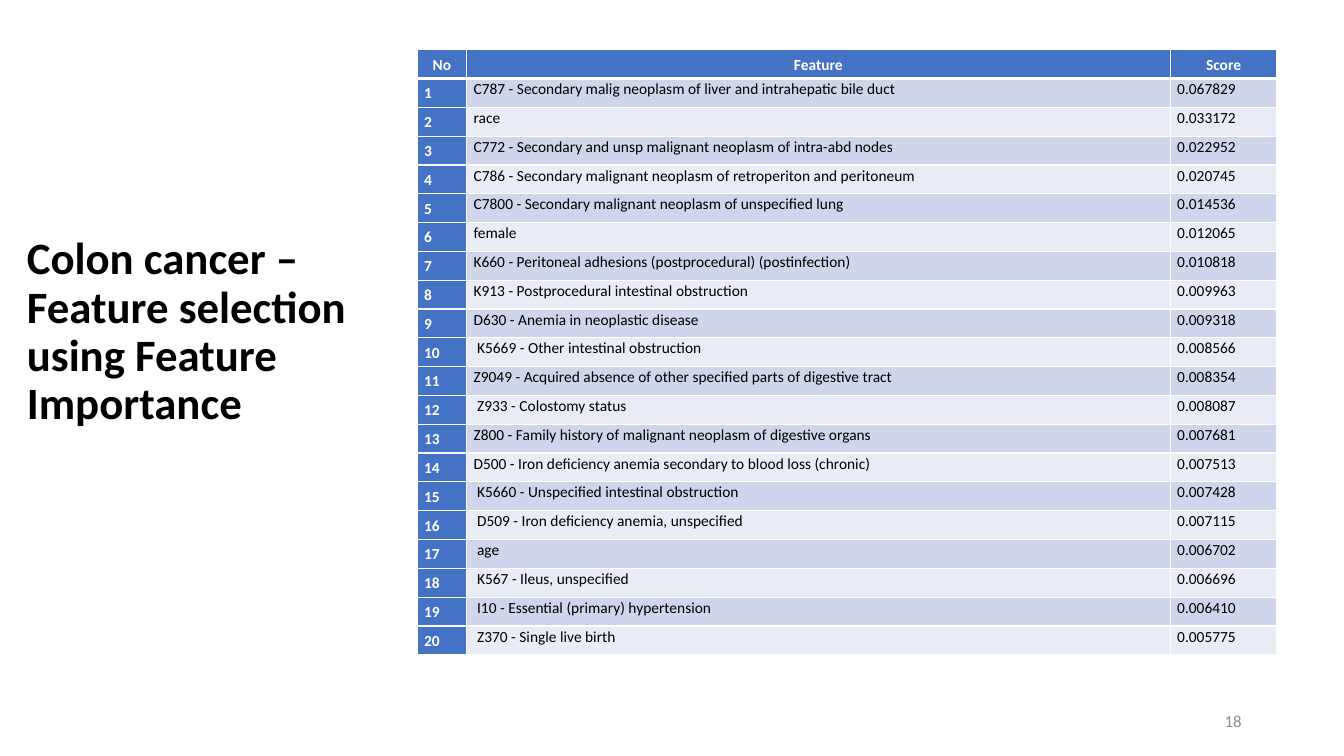
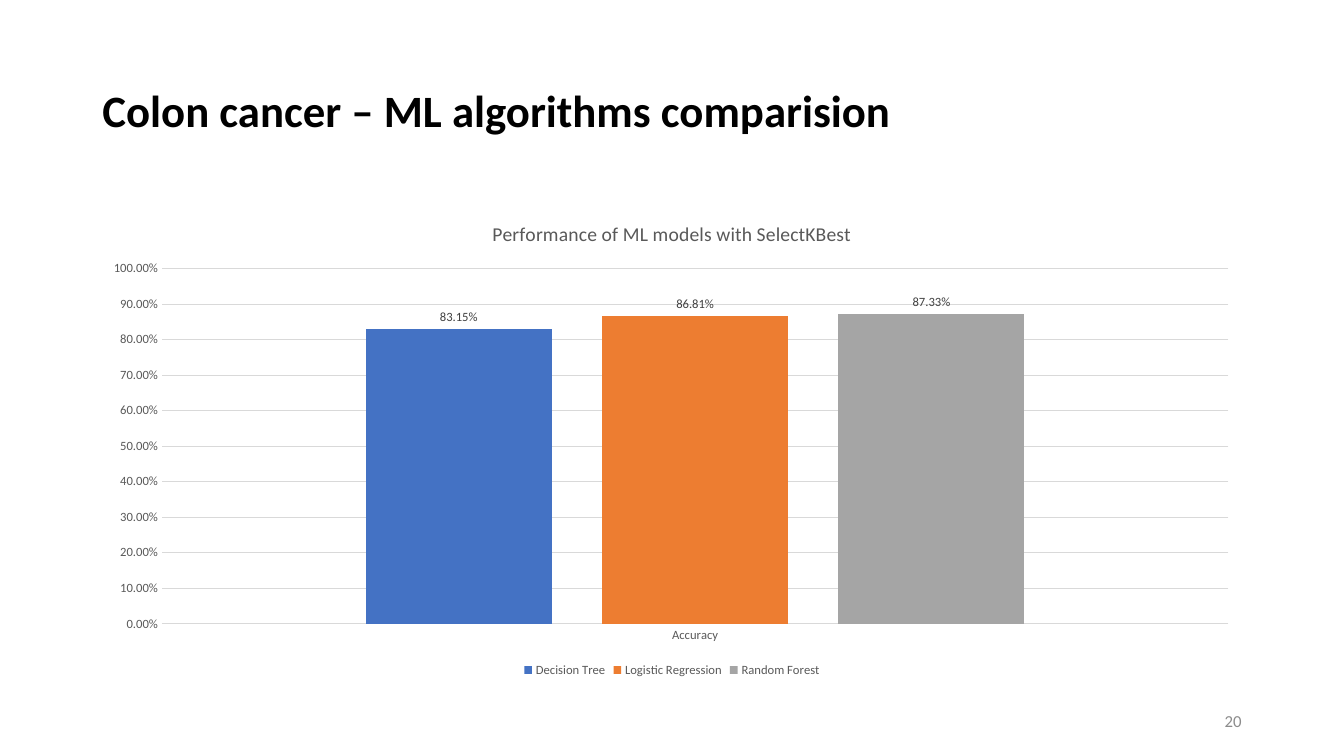
import pptx
import pptx.chart.data
import pptx.dml.color
import pptx.enum.chart
import pptx.enum.text
import pptx.oxml
import pptx.oxml.ns
import pptx.util

Pt = pptx.util.Pt
ALIGN = pptx.enum.text.PP_ALIGN
ANCHOR = pptx.enum.text.MSO_ANCHOR

# Shared style
FONT = "Calibri"
COLORS = {
    "text": "000000", "white": "FFFFFF", "number": "8C8C8C",
    "blue": "4472C4", "orange": "ED7D31", "gray": "A5A5A5",
    "band_dark": "CFD5EA", "band_light": "E9EBF5",
    "chart_text": "595959", "label": "404040", "grid": "D9D9D9",
}

# Content
TABLE_TITLE = ["Colon cancer – ", "Feature selection using Feature Importance"]
CHART_TITLE = ["Colon cancer – ML algorithms comparision"]
HEADERS = ["No", "Feature", "Score"]
FEATURES = [
    ("C787 - Secondary malig neoplasm of liver and intrahepatic bile duct", "0.067829"),
    ("race", "0.033172"),
    ("C772 - Secondary and unsp malignant neoplasm of intra-abd nodes", "0.022952"),
    ("C786 - Secondary malignant neoplasm of retroperiton and peritoneum", "0.020745"),
    ("C7800 - Secondary malignant neoplasm of unspecified lung", "0.014536"),
    ("female", "0.012065"),
    ("K660 - Peritoneal adhesions (postprocedural) (postinfection)", "0.010818"),
    ("K913 - Postprocedural intestinal obstruction", "0.009963"),
    ("D630 - Anemia in neoplastic disease", "0.009318"),
    (" K5669 - Other intestinal obstruction", "0.008566"),
    ("Z9049 - Acquired absence of other specified parts of digestive tract", "0.008354"),
    (" Z933 - Colostomy status", "0.008087"),
    ("Z800 - Family history of malignant neoplasm of digestive organs", "0.007681"),
    ("D500 - Iron deficiency anemia secondary to blood loss (chronic)", "0.007513"),
    (" K5660 - Unspecified intestinal obstruction", "0.007428"),
    (" D509 - Iron deficiency anemia, unspecified", "0.007115"),
    (" age", "0.006702"),
    (" K567 - Ileus, unspecified", "0.006696"),
    (" I10 - Essential (primary) hypertension", "0.006410"),
    (" Z370 - Single live birth", "0.005775"),
]
PERFORMANCE = "Performance of ML models with SelectKBest"
MODELS = [
    ("Decision Tree", 0.8315, "blue"),
    ("Logistic Regression", 0.8681, "orange"),
    ("Random Forest", 0.8733, "gray"),
]


def rgb(color):
    return pptx.dml.color.RGBColor.from_string(COLORS[color])


def style_font(font, size, color, bold=False):
    font.name, font.size, font.bold = FONT, Pt(size), bold
    font.color.rgb = rgb(color)


def add_span(para, text, size, color, bold=False):
    span = para.add_run()
    span.text = text
    style_font(span.font, size, color, bold)


def add_page(deck, title_lines, title_area, number):
    """Add a page with its title and page number."""
    page = deck.slides.add_slide(deck.slide_layouts[5])
    title = page.shapes.title
    title.left, title.top, title.width, title.height = map(Pt, title_area)
    frame = title.text_frame
    frame.auto_size = pptx.enum.text.MSO_AUTO_SIZE.NONE
    frame.vertical_anchor = ANCHOR.MIDDLE
    para = frame.paragraphs[0]
    para.alignment, para.line_spacing = ALIGN.LEFT, 0.9
    for index, line in enumerate(title_lines):
        if index:
            para.add_line_break()
        add_span(para, line, 32, "text", bold=True)

    box = page.shapes.add_textbox(Pt(678), Pt(500.5), Pt(216), Pt(28.75))
    box.text_frame.word_wrap = True
    box.text_frame.vertical_anchor = ANCHOR.MIDDLE
    para = box.text_frame.paragraphs[0]
    para.alignment = ALIGN.RIGHT
    add_span(para, str(number), 12, "number")
    return page


def add_borders(cell, top, bottom):
    widths = {"lnL": 1, "lnR": 1, "lnT": top, "lnB": bottom}
    for tag, width in widths.items():
        cell._tc.get_or_add_tcPr().append(pptx.oxml.parse_xml(
            f'<a:{tag} {pptx.oxml.ns.nsdecls("a")} w="{Pt(width)}"><a:solidFill>'
            f'<a:srgbClr val="{COLORS["white"]}"/></a:solidFill></a:{tag}>'))


def add_feature_table(page):
    rows = [HEADERS] + [(str(n), *row) for n, row in enumerate(FEATURES, 1)]
    widths, row_height = [35.3, 502.6, 76.3], 20.6
    table = page.shapes.add_table(
        len(rows), len(widths), Pt(298), Pt(35.5),
        Pt(sum(widths)), Pt(row_height * len(rows))).table
    for column, width in zip(table.columns, widths):
        column.width = Pt(width)
    for r, row in enumerate(rows):
        table.rows[r].height = Pt(row_height)
        for c, text in enumerate(row):
            cell = table.cell(r, c)
            heading = r == 0 or c == 0
            add_borders(cell, 3 if r == 1 else 1, 3 if r == 0 else 1)
            band = "band_dark" if r % 2 else "band_light"
            cell.fill.solid()
            cell.fill.fore_color.rgb = rgb("blue" if heading else band)
            cell.margin_left = cell.margin_right = Pt(5)
            cell.margin_top = cell.margin_bottom = 0
            cell.vertical_anchor = ANCHOR.MIDDLE if heading else ANCHOR.TOP
            para = cell.text_frame.paragraphs[0]
            para.alignment = ALIGN.CENTER if r == 0 else ALIGN.LEFT
            para.line_spacing = 1.07
            add_span(para, text, 11, "white" if heading else "text", heading)


def add_accuracy_chart(page):
    data = pptx.chart.data.CategoryChartData(number_format="0.00%")
    data.categories = ["Accuracy"]
    for name, value, _ in MODELS:
        data.add_series(name, [value])
    chart = page.shapes.add_chart(
        pptx.enum.chart.XL_CHART_TYPE.COLUMN_CLUSTERED,
        Pt(66), Pt(144), Pt(828), Pt(342.75), data).chart
    style_font(chart.font, 10, "text")
    chart.has_title = True
    add_span(chart.chart_title.text_frame.paragraphs[0], PERFORMANCE, 14, "chart_text")
    chart.chart_title.include_in_layout = False

    # Bars and value labels
    plot = chart.plots[0]
    plot.gap_width, plot.overlap, plot.vary_by_categories = 219, -27, False
    for series, (_, _, color) in zip(plot.series, MODELS):
        series.format.fill.solid()
        series.format.fill.fore_color.rgb = rgb(color)
        labels = series.data_labels
        labels.show_value = True
        labels.position = pptx.enum.chart.XL_LABEL_POSITION.OUTSIDE_END
        labels.number_format, labels.number_format_is_linked = "0.00%", False
        style_font(labels.font, 9, "label")

    # Axes and legend
    for axis in (chart.category_axis, chart.value_axis):
        axis.major_tick_mark = pptx.enum.chart.XL_TICK_MARK.NONE
        axis.minor_tick_mark = pptx.enum.chart.XL_TICK_MARK.NONE
        style_font(axis.tick_labels.font, 9, "chart_text")
    values = chart.value_axis
    values.minimum_scale, values.maximum_scale, values.major_unit = 0, 1, 0.1
    values.tick_labels.number_format = "0.00%"
    values.tick_labels.number_format_is_linked = False
    values.format.line.fill.background()
    for line in (chart.category_axis.format.line, values.major_gridlines.format.line):
        line.width = Pt(0.75)
        line.color.rgb = rgb("grid")
    chart.has_legend = True
    chart.legend.position = pptx.enum.chart.XL_LEGEND_POSITION.BOTTOM
    chart.legend.include_in_layout = False
    style_font(chart.legend.font, 9, "chart_text")

    # Fixed place for the plot inside the chart
    area = chart._chartSpace.chart.plotArea
    for old in area.findall(pptx.oxml.ns.qn("c:layout")):
        area.remove(old)
    place = {"x": 0.06, "y": 0.14, "w": 0.92, "h": 0.74}
    modes = '<c:xMode val="edge"/><c:yMode val="edge"/>'
    sizes = "".join(f'<c:{key} val="{value}"/>' for key, value in place.items())
    area.insert(0, pptx.oxml.parse_xml(
        f'<c:layout {pptx.oxml.ns.nsdecls("c")}><c:manualLayout>'
        f'<c:layoutTarget val="inner"/>{modes}{sizes}</c:manualLayout></c:layout>'))


def main():
    deck = pptx.Presentation()
    deck.slide_width, deck.slide_height = Pt(960), Pt(540)
    add_feature_table(add_page(deck, TABLE_TITLE, (12, 174, 300, 127.5), 18))
    add_accuracy_chart(add_page(deck, CHART_TITLE, (66, 28.75, 828, 104.5), 20))
    deck.save("out.pptx")


if __name__ == "__main__":
    main()
